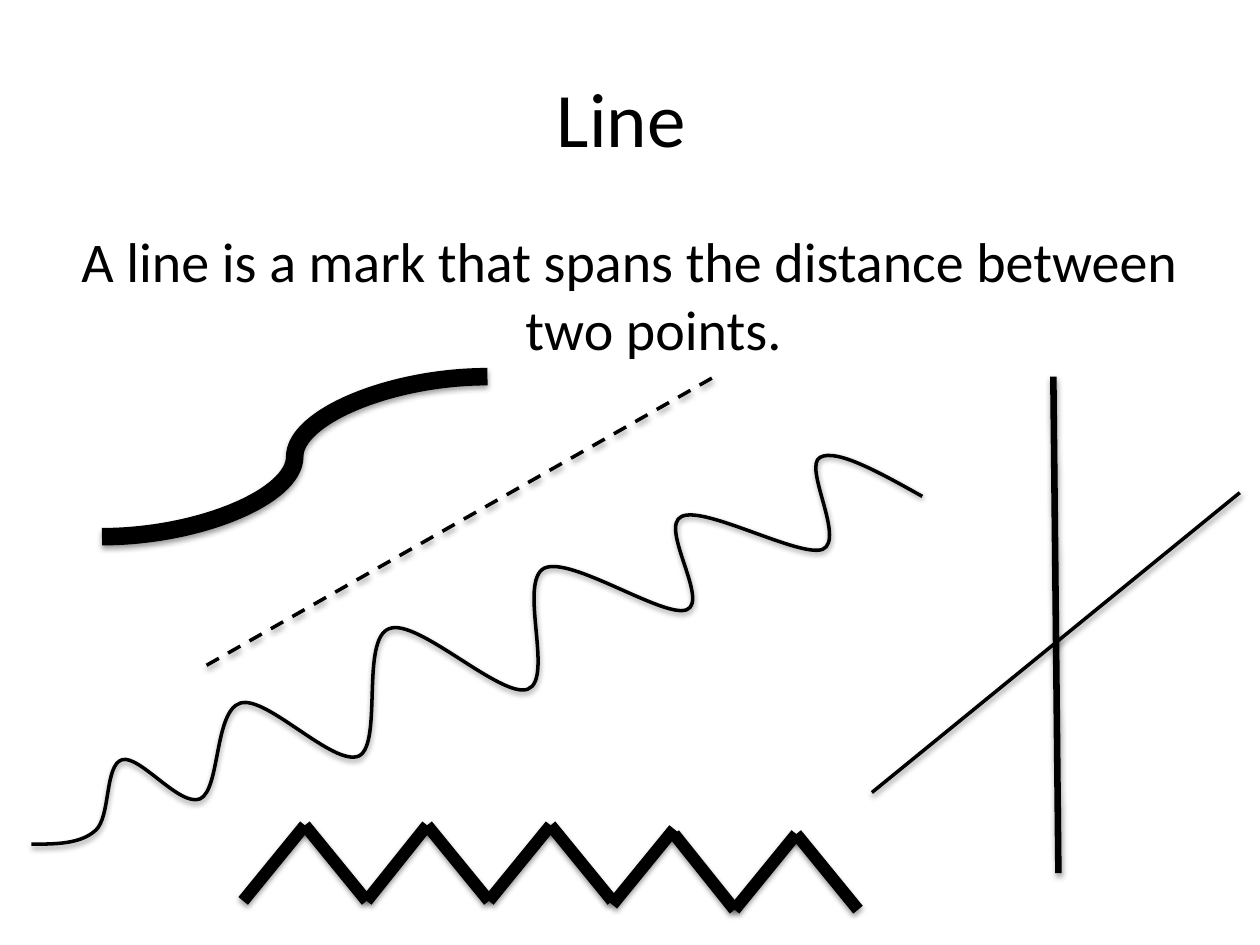
from typing import NamedTuple

from lxml.etree import SubElement
from pptx import Presentation
from pptx.dml.color import RGBColor
from pptx.enum.dml import MSO_LINE
from pptx.enum.shapes import MSO_CONNECTOR
from pptx.enum.text import PP_ALIGN
from pptx.oxml import parse_xml
from pptx.oxml.ns import nsdecls, qn
from pptx.util import Pt

PX = 9144  # EMU in one px, 100 px to the inch
BLACK = RGBColor(0, 0, 0)
FONT = "Calibri"
SHADOW_XML = (
    f'<a:effectLst {nsdecls("a")}>'
    '<a:outerShdw blurRad="40000" dist="20000" dir="5400000" rotWithShape="0">'
    '<a:srgbClr val="000000"><a:alpha val="38000"/></a:srgbClr>'
    "</a:outerShdw></a:effectLst>"
)

# Wave, relative to its box: a start, then two handles and an end for each bend
WAVE_START = (0, 314)
WAVE_BENDS = [
    ((19, 314), (39, 314), (51, 303)),
    ((63, 292), (58, 251), (72, 247)),
    ((86, 243), (118, 285), (134, 278)),
    ((150, 270), (145, 208), (166, 202)),
    ((187, 196), (240, 253), (260, 244)),
    ((279, 234), (261, 151), (284, 143)),
    ((306, 134), (373, 199), (394, 191)),
    ((415, 183), (386, 106), (407, 95)),
    ((428, 85), (502, 135), (520, 128)),
    ((538, 121), (498, 62), (516, 54)),
    ((534, 45), (610, 87), (628, 80)),
    ((646, 72), (612, 14), (626, 7)),
    ((639, 0), (673, 19), (707, 38)),
]


class Box(NamedTuple):
    left: int
    top: int
    width: int
    height: int


def ink(mark, weight):
    """Give a mark its black stroke and soft shadow."""
    mark.line.color.rgb = BLACK
    mark.line.width = Pt(weight)
    properties = mark._element.spPr
    for effects in properties.findall(qn("a:effectLst")):
        properties.remove(effects)
    properties.append(parse_xml(SHADOW_XML))


def stroke(shapes, box, weight, rising=True, kind=MSO_CONNECTOR.STRAIGHT):
    """Draw a line from corner to corner of the box."""
    upper, lower = box.top, box.top + box.height
    start_y, end_y = (lower, upper) if rising else (upper, lower)
    line = shapes.add_connector(
        kind, box.left * PX, start_y * PX, (box.left + box.width) * PX, end_y * PX
    )
    ink(line, weight)
    return line


def fill_placeholder(placeholder, box, text, size):
    placeholder.left, placeholder.top, placeholder.width, placeholder.height = (
        length * PX for length in box
    )
    placeholder.text_frame.text = text
    paragraph = placeholder.text_frame.paragraphs[0]
    paragraph.alignment = PP_ALIGN.CENTER
    font = paragraph.runs[0].font
    font.name, font.size, font.color.rgb = FONT, Pt(size), BLACK
    return paragraph


def add_definition(placeholder, box, text):
    paragraph = fill_placeholder(placeholder, box, text, 32)
    SubElement(paragraph._p.get_or_add_pPr(), qn("a:buNone"))


def add_wave(shapes, box):
    def place(point):
        return box.left + point[0], box.top + point[1]

    builder = shapes.build_freeform(*place(WAVE_START), scale=PX)
    builder.add_line_segments(
        [place(point) for bend in WAVE_BENDS for point in bend], close=False
    )
    wave = builder.convert_to_shape()
    wave.fill.background()
    ink(wave, 2)

    # Join every three straight segments into one Bezier bend
    outline = wave._element.find(".//" + qn("a:path"))
    segments = outline.findall(qn("a:lnTo"))
    for first in range(0, len(segments), 3):
        bend = SubElement(outline, qn("a:cubicBezTo"))
        for segment in segments[first:first + 3]:
            bend.append(segment[0])
            outline.remove(segment)


def add_cross(shapes, box):
    slant_top = box.top + 92
    stroke(shapes, Box(box.left, slant_top, box.width, 238), 2)
    stroke(shapes, Box(box.left + 144, box.top, 4, box.height), 3.75, rising=False)


def add_zigzag(shapes, box, teeth=5):
    zigzag = shapes.add_group_shape().shapes
    half = box.width / (2 * teeth)
    tooth_height = 60
    slopes = [(True, (0, 0, 0, 3, 7)), (False, (0, 0, 0, 7, 7))]
    for rising, drops in slopes:
        for tooth, drop in enumerate(drops):
            step = 2 * tooth + (0 if rising else 1)
            left = round(box.left + step * half)
            right = round(box.left + (step + 1) * half)
            slope = Box(left, box.top + drop, right - left, tooth_height)
            stroke(zigzag, slope, 7, rising)


def main():
    deck = Presentation()
    deck.slide_width, deck.slide_height = 1000 * PX, 750 * PX
    slide = deck.slides.add_slide(deck.slide_layouts[1])
    title, definition = slide.placeholders
    shapes = slide.shapes

    fill_placeholder(title, Box(50, 30, 900, 125), "Line ", 44)
    add_definition(
        definition,
        Box(50, 175, 900, 495),
        "A line is a mark that spans the distance between two points.",
    )
    add_wave(shapes, Box(25, 356, 707, 314))
    add_cross(shapes, Box(692, 299, 292, 394))
    add_zigzag(shapes, Box(193, 655, 488, 67))
    stroke(shapes, Box(81, 299, 306, 127), 10, kind=MSO_CONNECTOR.CURVE)
    dashed = stroke(shapes, Box(164, 299, 403, 229), 2)
    dashed.line.dash_style = MSO_LINE.DASH

    deck.save("out.pptx")


if __name__ == "__main__":
    main()
